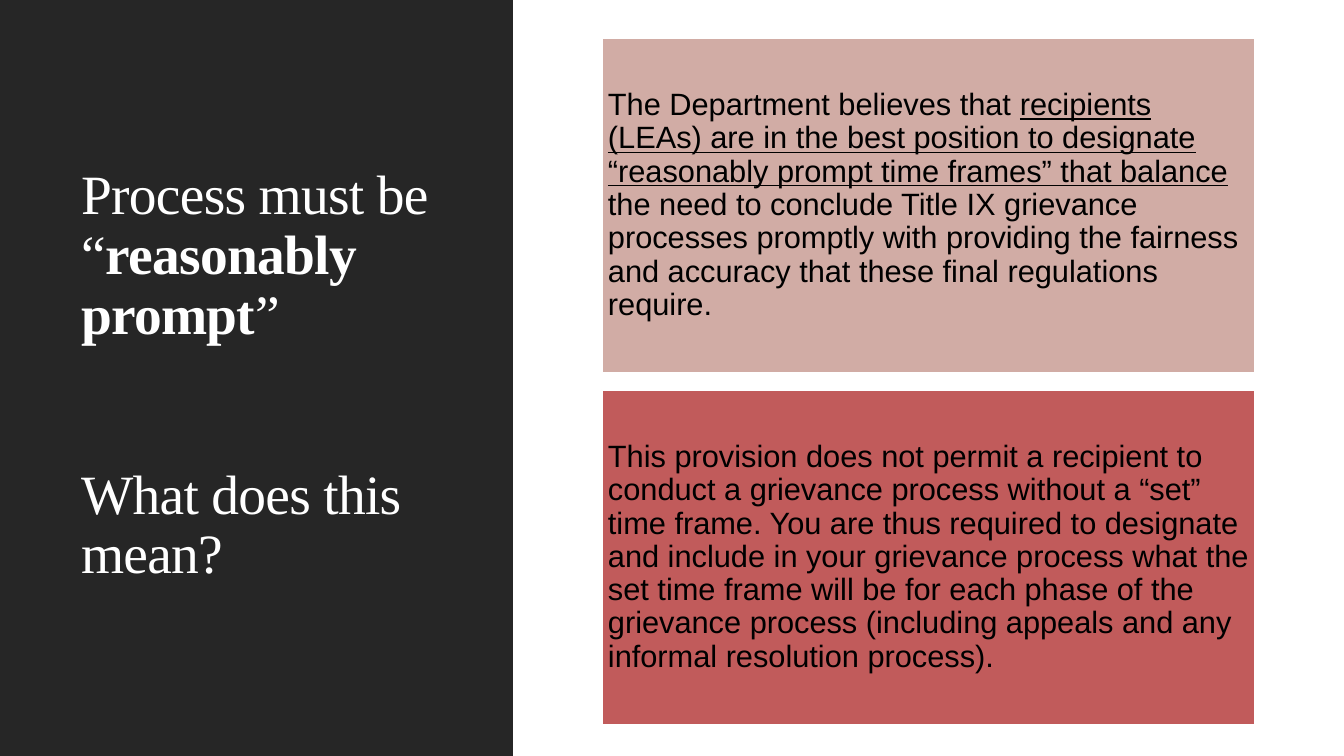
"""Build the slide on reasonably prompt grievance processes."""
import pptx
import pptx.dml.color
import pptx.enum.shapes
import pptx.enum.text
import pptx.util

RGB = pptx.dml.color.RGBColor
WHITE = RGB(0xFF, 0xFF, 0xFF)
BLACK = RGB(0x00, 0x00, 0x00)
CHARCOAL = RGB(0x26, 0x26, 0x26)
ROSE = RGB(0xD1, 0xAC, 0xA5)
RED = RGB(0xC1, 0x5B, 0x5B)

BOX_LEFT, BOX_TOP, BOX_W, BOX_H, BOX_STEP = 602, 38, 653, 335, 352
TITLE_GAP = 120

TITLE = [
    [("Process must be “", ""), ("reasonably prompt", "bold"), ("”", "")],
    [("What does this mean?", "")],
]
BOXES = [
    (ROSE, [
        ("The Department believes that ", ""),
        ("recipients (LEAs) are in the best position to designate "
         "“reasonably prompt time frames” that balance ", "underline"),
        ("the need to conclude Title IX grievance processes promptly with "
         "providing the fairness and accuracy that these final regulations "
         "require.", ""),
    ]),
    (RED, [
        ("This provision does not permit a recipient to conduct a grievance "
         "process without a “set” time frame. You are thus required to "
         "designate and include in your grievance process what the set time "
         "frame will be for each phase of the grievance process (including "
         "appeals and any informal resolution process).", ""),
    ]),
]


def px(n):
    return pptx.util.Emu(round(n * 914400 / 100.8))


class SlideBuilder:
    """Hold the slide and its style, and add each kind of element."""

    title_font, title_size = "Times New Roman", 39.6
    body_font, body_size = "Arial", 22

    def __init__(self, prs):
        self.slide = prs.slides.add_slide(prs.slide_layouts[5])

    def add_runs(self, p, runs, font, size, color):
        p.alignment = pptx.enum.text.PP_ALIGN.LEFT
        p.line_spacing = 0.9
        for text, style in runs:
            r = p.add_run()
            r.text = text
            r.font.name = font
            r.font.size = pptx.util.Pt(size)
            r.font.color.rgb = color
            r.font.bold = style == "bold"
            r.font.underline = style == "underline"

    def rect(self, left, top, width, height, fill):
        sp = self.slide.shapes.add_shape(
            pptx.enum.shapes.MSO_SHAPE.RECTANGLE,
            px(left), px(top), px(width), px(height))
        sp.shadow.inherit = False
        sp.fill.solid()
        sp.fill.fore_color.rgb = fill
        sp.line.fill.background()
        return sp

    def panel(self, left, top, width, height, fill):
        sp = self.rect(left, top, width, height, fill)
        self.slide.shapes.title.element.addprevious(sp.element)

    def title(self, left, top, width, height, paragraphs):
        sp = self.slide.shapes.title
        sp.left, sp.top = px(left), px(top)
        sp.width, sp.height = px(width), px(height)
        tf = sp.text_frame
        tf.word_wrap = True
        tf.auto_size = pptx.enum.text.MSO_AUTO_SIZE.NONE
        tf.vertical_anchor = pptx.enum.text.MSO_ANCHOR.BOTTOM
        for i, runs in enumerate(paragraphs):
            p = tf.add_paragraph() if i else tf.paragraphs[0]
            p.space_before = px(TITLE_GAP if i else 0)
            self.add_runs(p, runs, self.title_font, self.title_size, WHITE)
            for r in p.runs:
                r.font._element.set("spc", "-50")

    def text_box(self, left, top, width, height, fill, runs):
        sp = self.rect(left, top, width, height, fill)
        sp.line.color.rgb = WHITE
        sp.line.width = pptx.util.Pt(1.25)
        tf = sp.text_frame
        tf.word_wrap = True
        tf.vertical_anchor = pptx.enum.text.MSO_ANCHOR.MIDDLE
        tf.margin_left = tf.margin_right = px(6)
        tf.margin_top = tf.margin_bottom = px(6)
        self.add_runs(tf.paragraphs[0], runs,
                      self.body_font, self.body_size, BLACK)


def main():
    prs = pptx.Presentation()
    prs.slide_width, prs.slide_height = px(1344), px(756)
    builder = SlideBuilder(prs)
    builder.panel(0, 0, 513, 756, CHARCOAL)
    builder.title(71, 87, 388, 504, TITLE)
    for i, (fill, runs) in enumerate(BOXES):
        builder.text_box(BOX_LEFT, BOX_TOP + i * BOX_STEP, BOX_W, BOX_H,
                         fill, runs)
    prs.save("out.pptx")


if __name__ == "__main__":
    main()
